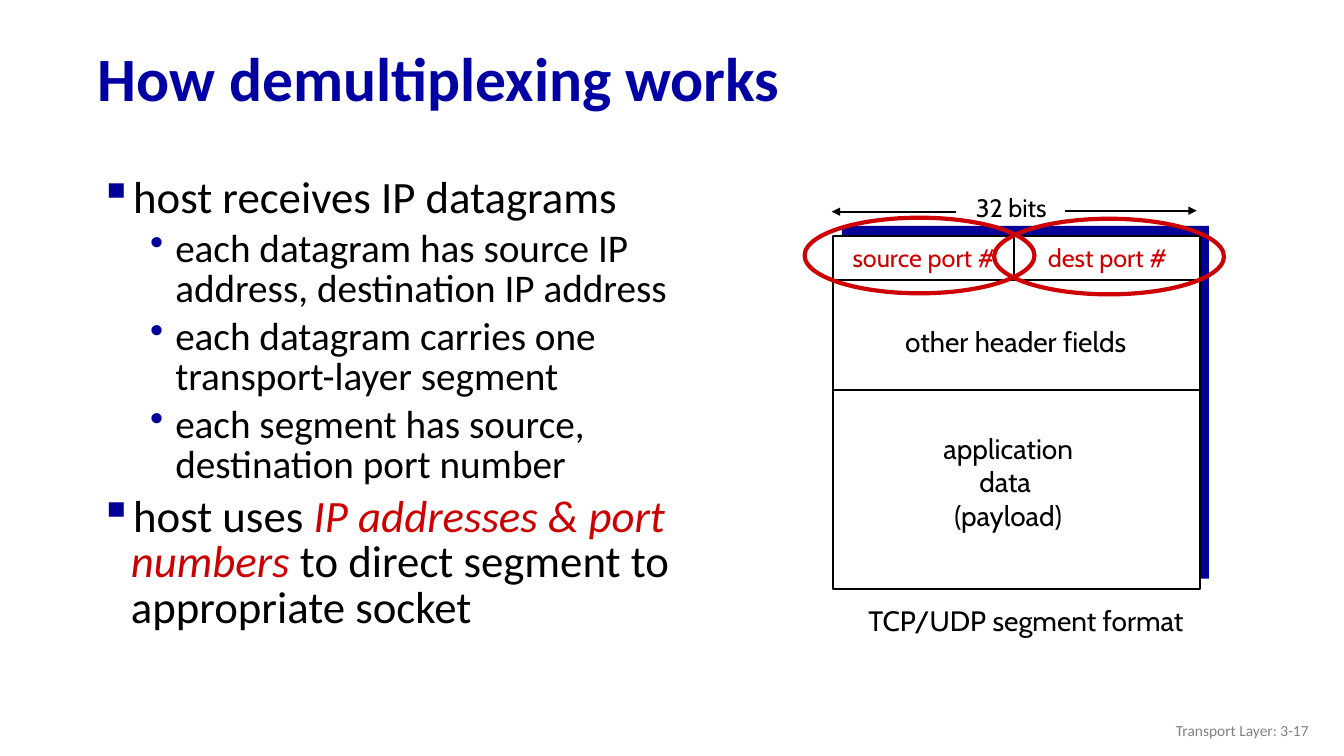
import pptx
import pptx.util
import pptx.dml.color
import pptx.enum.shapes
import pptx.enum.text
import pptx.oxml
import pptx.oxml.ns
import lxml.etree

Inches, Pt = pptx.util.Inches, pptx.util.Pt
SHAPES = pptx.enum.shapes.MSO_SHAPE
ALIGN = pptx.enum.text.PP_ALIGN
ANCHOR = pptx.enum.text.MSO_ANCHOR
qn = pptx.oxml.ns.qn

COLORS = {"title": "0000A3", "navy": "000099", "black": "000000", "white": "FFFFFF",
          "red": "CC0000", "ring": "CD0004", "gray": "808080"}

TITLE = "How demultiplexing works"
POINTS = [
    (0, [("host receives IP datagrams", False)]),
    (1, [("each datagram has source IP address, destination IP address", False)]),
    (1, [("each datagram carries one transport-layer segment", False)]),
    (1, [("each segment has source, destination port number", False)]),
    (0, [("host uses ", False), ("IP addresses & port numbers", True),
         (" to direct segment to appropriate socket", False)]),
]
LEVELS = [
    {"size": 32, "margin": 0.31, "hang": 0.31, "bullet": "▪"},
    {"size": 28, "margin": 0.75, "hang": 0.25, "bullet": "•"},
]
FOOTER = "Transport Layer: 3-17"

LEFT, TOP, WIDTH, HEIGHT = 8.26, 2.34, 3.64, 3.5
RIGHT = LEFT + WIDTH
PORTS_BOTTOM, HEADER_BOTTOM, MIDDLE = 2.78, 3.87, 10.06
RULES = [
    (LEFT, PORTS_BOTTOM, RIGHT, PORTS_BOTTOM, False),
    (LEFT, HEADER_BOTTOM, RIGHT, HEADER_BOTTOM, False),
    (MIDDLE, PORTS_BOTTOM, MIDDLE, TOP, False),
    (10.56, 2.09, 11.87, 2.09, True),
    (9.48, 2.1, 8.25, 2.1, True),
]
LABELS = [
    ("source port #", (8.31, 2.36, 1.71, 0.4), 18, "red"),
    ("dest port #", (10.26, 2.36, 1.45, 0.4), 18, "red"),
    ("32 bits", (9.56, 1.86, 0.94, 0.4), 18, "black"),
    ("application\ndata \n(payload)", (9.24, 4.23, 1.52, 1.1), 20, "black"),
    ("other header fields", (8.82, 3.17, 2.51, 0.43), 20, "black"),
    ("TCP/UDP segment format", (8.5, 5.94, 3.35, 0.43), 20, "black"),
]
RINGS = [(7.98, 2.16, 2.28, 0.75), (9.86, 2.17, 2.28, 0.75)]


def rgb(color):
    return pptx.dml.color.RGBColor.from_string(COLORS[color])


def style(span, font, size, color, bold=False, italic=False):
    span.font.name = font
    span.font.size = Pt(size)
    span.font.color.rgb = rgb(color)
    span.font.bold = bold
    span.font.italic = italic


def add_text(page, text, place, font, size, color, align, wrap):
    box = page.shapes.add_textbox(*map(Inches, place))
    frame = box.text_frame
    frame.text = text
    frame.word_wrap = wrap
    for para in frame.paragraphs:
        para.alignment = align
        for span in para.runs:
            style(span, font, size, color)
    return frame


def add_outline(page, kind, place, fill=None, line=None, weight=1.5):
    shape = page.shapes.add_shape(kind, *map(Inches, place))
    shape.shadow.inherit = False
    if fill:
        shape.fill.solid()
        shape.fill.fore_color.rgb = rgb(fill)
    else:
        shape.fill.background()
    if line:
        shape.line.color.rgb = rgb(line)
        shape.line.width = Pt(weight)
    else:
        shape.line.fill.background()


def add_rule(page, x1, y1, x2, y2, arrow):
    rule = page.shapes.add_connector(pptx.enum.shapes.MSO_CONNECTOR.STRAIGHT,
                                     *map(Inches, (x1, y1, x2, y2)))
    rule.line.color.rgb = rgb("black")
    rule.line.width = Pt(1.5)
    if arrow:
        line = rule.line._get_or_add_ln()
        lxml.etree.SubElement(line, qn("a:tailEnd"), type="triangle")
    lxml.etree.SubElement(rule._element.spPr, qn("a:effectLst"))


def add_bullet(para, level):
    props = para._p.get_or_add_pPr()
    props.set("marL", str(Inches(level["margin"])))
    props.set("indent", str(-Inches(level["hang"])))
    color = lxml.etree.SubElement(props, qn("a:buClr"))
    lxml.etree.SubElement(color, qn("a:srgbClr"), val=COLORS["navy"])
    lxml.etree.SubElement(props, qn("a:buChar"), char=level["bullet"])


def add_title(page):
    title = page.shapes.title
    title.left, title.top, title.width, title.height = map(Inches, (0.87, 0.32, 12.14, 0.98))
    frame = title.text_frame
    frame.text = TITLE
    frame.vertical_anchor = ANCHOR.MIDDLE
    para = frame.paragraphs[0]
    para.alignment = ALIGN.LEFT
    para.line_spacing = 0.9
    style(para.runs[0], "Calibri", 44, "title", bold=True)


def add_points(page):
    frame = page.shapes.add_textbox(*map(Inches, (0.89, 1.71, 6.24, 3.05))).text_frame
    frame.word_wrap = True
    for index, (depth, spans) in enumerate(POINTS):
        level = LEVELS[depth]
        para = frame.add_paragraph() if index else frame.paragraphs[0]
        para.level = depth
        para.line_spacing = 0.85
        para.space_before = Pt(level["size"] * 0.2)
        add_bullet(para, level)
        for text, stressed in spans:
            span = para.add_run()
            span.text = text
            style(span, "Calibri", level["size"], "red" if stressed else "black", italic=stressed)


def add_segment(page):
    add_outline(page, SHAPES.RECTANGLE, (LEFT + 0.09, TOP - 0.1, WIDTH, HEIGHT), fill="navy")
    add_outline(page, SHAPES.RECTANGLE, (LEFT, TOP, WIDTH, HEIGHT), fill="white", line="black")
    for rule in RULES:
        add_rule(page, *rule)
    for text, place, size, color in LABELS:
        add_text(page, text, place, "Cabin", size, color, ALIGN.CENTER, False)
    for place in RINGS:
        add_outline(page, SHAPES.OVAL, place, line="ring", weight=3)


def main():
    deck = pptx.Presentation()
    deck.slide_width, deck.slide_height = Inches(13.33), Inches(7.5)
    page = deck.slides.add_slide(deck.slide_layouts[5])
    add_title(page)
    add_points(page)
    add_segment(page)
    footer = add_text(page, FOOTER, (10.08, 7.05, 3, 0.4), "Calibri", 11, "gray", ALIGN.RIGHT, True)
    footer.vertical_anchor = ANCHOR.MIDDLE
    deck.save("out.pptx")


if __name__ == "__main__":
    main()
